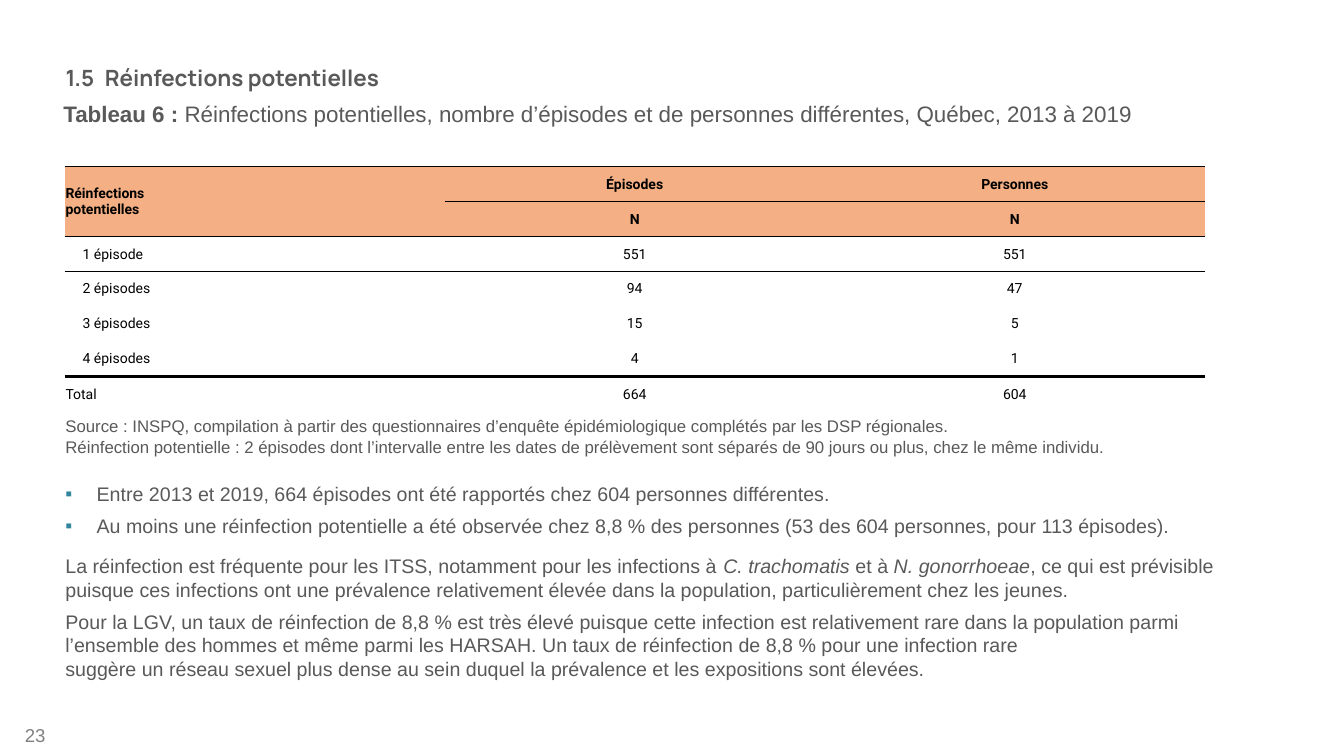
"""Build the slide on potential reinfections: a table, its source and findings."""
from lxml import etree
from pptx import Presentation
from pptx.dml.color import RGBColor
from pptx.enum.text import MSO_ANCHOR, MSO_AUTO_SIZE, PP_ALIGN
from pptx.oxml.ns import qn
from pptx.util import Inches, Pt

LEFT, CENTER, RIGHT = PP_ALIGN.LEFT, PP_ALIGN.CENTER, PP_ALIGN.RIGHT
TOP, MIDDLE = MSO_ANCHOR.TOP, MSO_ANCHOR.MIDDLE
NO_AUTOFIT = MSO_AUTO_SIZE.NONE
GREY, BLACK, ORANGE, TEAL = "595959", "000000", "F4B084", "31859C"
NO_STYLE_NO_GRID = "{2D5ABB26-0587-4C30-8999-92F81FD0307C}"


def style(paragraph, size, name="Arial", color=GREY, bold=False, align=LEFT):
    paragraph.alignment = align
    font = paragraph.font
    font.size, font.name, font.bold = Pt(size), name, bold
    font.color.rgb = RGBColor.from_string(color)


def add_box(left, top, width, height, anchor=TOP):
    box = page.shapes.add_textbox(Inches(left), Inches(top), Inches(width), Inches(height))
    box.text_frame.word_wrap = True
    box.text_frame.vertical_anchor = anchor
    return box.text_frame


deck = Presentation()
deck.slide_width, deck.slide_height = Inches(13.33), Inches(7.5)
page = deck.slides.add_slide(deck.slide_layouts[5])

title = page.shapes.title
title.left, title.top = Inches(0.55), Inches(0.59)
title.width, title.height = Inches(5.65), Inches(0.37)
title.text_frame.text = "1.5 \tRéinfections potentielles"
title.text_frame.vertical_anchor = TOP
title.text_frame.auto_size = NO_AUTOFIT
heading = title.text_frame.paragraphs[0]
properties = heading._p.get_or_add_pPr()
properties.set("marL", str(Inches(0.39)))
properties.set("indent", str(-Inches(0.39)))
style(heading, 16, "Manrope", bold=True)

caption = add_box(0.53, 0.94, 11.3, 0.37).paragraphs[0]
style(caption, 16)
label = caption.add_run()
label.text = "Tableau 6 : "
label.font.bold = True
caption.add_run().text = (
    "Réinfections potentielles, nombre d’épisodes et de personnes différentes, "
    "Québec, 2013 à 2019"
)

rows = [
    ("Réinfections\npotentielles", "Épisodes", "Personnes"),
    ("", "N", "N"),
    ("1 épisode", "551", "551"),
    ("2 épisodes", "94", "47"),
    ("3 épisodes", "15", "5"),
    ("4 épisodes", "4", "1"),
    ("Total", "664", "604"),
]
row_heights = [0.35, 0.33, 0.35, 0.34, 0.34, 0.36, 0.36]
rule_widths = {0: 1, 1: 0.5, 2: 0.5, 6: 2}

table = page.shapes.add_table(
    len(rows), 3, Inches(0.64), Inches(1.65), Inches(11.31), Inches(2.43)
).table
table.first_row = table.horz_banding = False
table._tbl.tblPr.find(qn("a:tableStyleId")).text = NO_STYLE_NO_GRID
for column in table.columns:
    column.width = Inches(3.77)
for row, height in zip(table.rows, row_heights):
    row.height = Inches(height)
table.cell(0, 0).merge(table.cell(1, 0))

for row_index, values in enumerate(rows):
    is_header = row_index < 2
    is_episode = 2 <= row_index <= 5
    for column_index, value in enumerate(values):
        cell = table.cell(row_index, column_index)
        is_label = column_index == 0
        cell.text = value
        cell.vertical_anchor = MIDDLE
        cell.margin_left = Inches(0.18 if is_label and is_episode else 0.01)
        cell.margin_right = cell.margin_top = Inches(0.01)
        cell.margin_bottom = 0
        for paragraph in cell.text_frame.paragraphs:
            style(paragraph, 10, "Roboto", BLACK, is_header, LEFT if is_label else CENTER)
        if is_header:
            cell.fill.solid()
            cell.fill.fore_color.rgb = RGBColor.from_string(ORANGE)
        else:
            cell.fill.background()
        bottom_rule = 2 if is_label and is_header else row_index + 1
        top_rule = None if is_label and row_index == 1 else row_index
        for tag, rule in (("a:lnB", bottom_rule), ("a:lnT", top_rule)):
            if rule in rule_widths:
                line = etree.Element(qn(tag), w=str(Pt(rule_widths[rule])))
                fill = etree.SubElement(line, qn("a:solidFill"))
                etree.SubElement(fill, qn("a:srgbClr"), val=BLACK)
                cell._tc.get_or_add_tcPr().insert(0, line)

source = add_box(0.55, 4.08, 10.78, 0.5)
source.text = (
    "Source : INSPQ, compilation à partir des questionnaires d’enquête épidémiologique "
    "complétés par les DSP régionales.\n"
    "Réinfection potentielle : 2 épisodes dont l’intervalle entre les dates de prélèvement "
    "sont séparés de 90 jours ou plus, chez le même individu."
)
for paragraph in source.paragraphs:
    style(paragraph, 12)

findings = [
    (True, 6, ["Entre 2013 et 2019, 664 épisodes ont été rapportés chez 604 personnes différentes."]),
    (True, 12, ["Au moins une réinfection potentielle a été observée chez 8,8 % des personnes "
                "(53 des 604 personnes, pour 113 épisodes)."]),
    (False, 6, ["La réinfection est fréquente pour les ITSS, notamment pour les infections à ",
                "C. trachomatis ", "et à ", "N. gonorrhoeae",
                ", ce qui est prévisible puisque ces infections ont une prévalence relativement "
                "élevée dans la population, particulièrement chez les jeunes."]),
    (False, 0, ["Pour la LGV, un taux de réinfection de 8,8 % est très élevé puisque cette "
                "infection est relativement rare dans la population parmi l’ensemble des hommes "
                "et même parmi les HARSAH. Un taux de réinfection de 8,8 % pour une infection rare"
                "\vsuggère un réseau sexuel plus dense au sein duquel la prévalence et les "
                "expositions sont élevées."]),
]
body = add_box(0.55, 4.73, 11.72, 2.09)
for index, (bulleted, space_after, spans) in enumerate(findings):
    paragraph = body.add_paragraph() if index else body.paragraphs[0]
    paragraph.space_after = Pt(space_after)
    if bulleted:
        properties = paragraph._p.get_or_add_pPr()
        properties.set("marL", str(Inches(0.31)))
        properties.set("indent", str(-Inches(0.31)))
        bullet_color = etree.SubElement(properties, qn("a:buClr"))
        etree.SubElement(bullet_color, qn("a:srgbClr"), val=TEAL)
        etree.SubElement(properties, qn("a:buFont"), typeface="Arial")
        etree.SubElement(properties, qn("a:buChar"), char="▪")
    style(paragraph, 14)
    if len(spans) == 1:
        paragraph.text = spans[0]
        continue
    for position, words in enumerate(spans):
        span = paragraph.add_run()
        span.text = words
        span.font.italic = position % 2 == 1

number = add_box(-0.1, 7.09, 0.65, 0.4, MIDDLE)
number.text = "23"
style(number.paragraphs[0], 13.3, color="808080", align=RIGHT)

deck.save("out.pptx")
